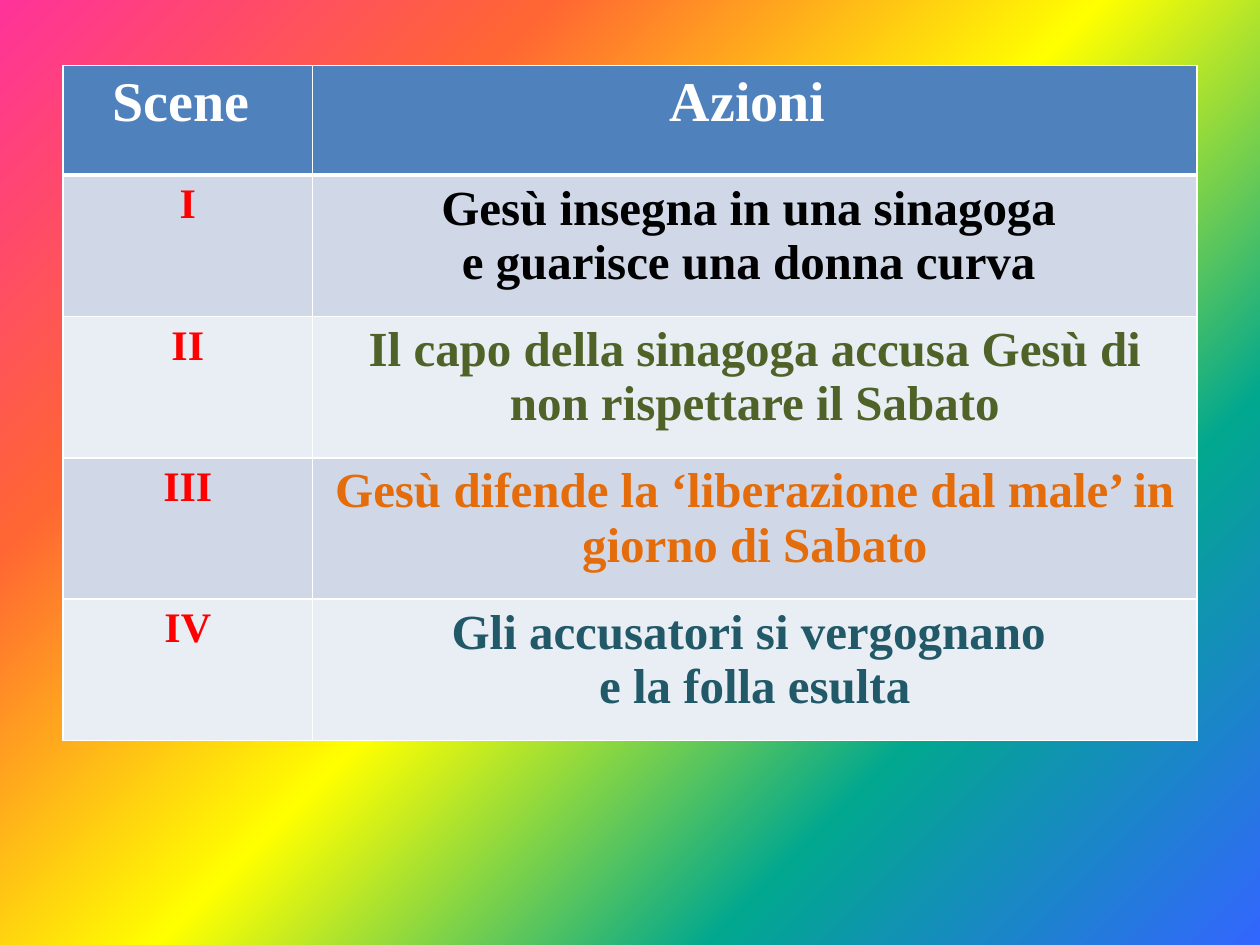
"""Build a slide with a table of scenes and actions on a rainbow background."""
import pptx
import pptx.dml.color
import pptx.enum.text
import pptx.oxml.ns
import pptx.util
from lxml import etree

Cm, Pt, qn = pptx.util.Cm, pptx.util.Pt, pptx.oxml.ns.qn

FONT = "Times New Roman"
WHITE, RED = "FFFFFF", "FF0000"
HEADER_FILL = "4F81BD"
BAND_FILLS = ["D0D8E8", "E9EDF4"]
RAINBOW = ["FF3399", "FF6633", "FFFF00", "01A78F", "3366FF"]
HEADER = ["Scene ", "Azioni "]
SCENES = [
    ("I", ["Gesù insegna in una sinagoga ", "e guarisce una donna curva "], "000000"),
    ("II", ["Il capo della sinagoga accusa Gesù di non rispettare il Sabato"], "4F6228"),
    ("III", ["Gesù difende la ‘liberazione dal male’ in giorno di Sabato"], "E46C0A"),
    ("IV", ["Gli accusatori si vergognano ", "e la folla esulta"], "215968"),
]
COL_WIDTHS = [5.03, 17.83]
HEADER_HEIGHT, SCENE_HEIGHT = 2.21, 2.85


def rgb(color):
    return pptx.dml.color.RGBColor.from_string(color)


def add_solid(parent, color):
    fill = etree.SubElement(parent, qn("a:solidFill"))
    etree.SubElement(fill, qn("a:srgbClr"), val=color)


def set_background(s):
    fill = s.background.fill
    fill.gradient()
    fill.gradient_angle = 315
    stops = next(s.element.iter(qn("a:gsLst")))
    for stop in list(stops):
        stops.remove(stop)
    for i, color in enumerate(RAINBOW):
        pos = 100000 * i // (len(RAINBOW) - 1)
        stop = etree.SubElement(stops, qn("a:gs"), pos=str(pos))
        etree.SubElement(stop, qn("a:srgbClr"), val=color)


def set_borders(cell, top, bottom):
    tcPr = cell._tc.get_or_add_tcPr()
    for side, width in zip("LRTB", [1, 1, top, bottom]):
        ln = etree.SubElement(tcPr, qn(f"a:ln{side}"), w=str(Pt(width)))
        add_solid(ln, WHITE)


def fill_cell(cell, lines, size, color, fill):
    cell.fill.solid()
    cell.fill.fore_color.rgb = rgb(fill)
    tf = cell.text_frame
    for i, line in enumerate(lines):
        p = tf.add_paragraph() if i else tf.paragraphs[0]
        p.alignment = pptx.enum.text.PP_ALIGN.CENTER
        r = p.add_run()
        r.text = line
        r.font.name, r.font.size, r.font.bold = FONT, Pt(size), True
        r.font.color.rgb = rgb(color)


def add_scene_table(s):
    heights = [HEADER_HEIGHT] + [SCENE_HEIGHT] * len(SCENES)
    table = s.shapes.add_table(
        len(heights), len(COL_WIDTHS), Cm(1.27), Cm(1.32),
        Cm(sum(COL_WIDTHS)), Cm(sum(heights))).table
    for col, width in zip(table.columns, COL_WIDTHS):
        col.width = Cm(width)
    for i, height in enumerate(heights):
        table.rows[i].height = Cm(height)
        for cell in table.rows[i].cells:
            set_borders(cell, 3 if i == 1 else 1, 3 if i == 0 else 1)
    for j, title in enumerate(HEADER):
        fill_cell(table.cell(0, j), [title], 32, WHITE, HEADER_FILL)
    for i, (scene, actions, color) in enumerate(SCENES):
        fill = BAND_FILLS[i % 2]
        fill_cell(table.cell(i + 1, 0), [scene], 24, RED, fill)
        fill_cell(table.cell(i + 1, 1), actions, 28, color, fill)


def main():
    prs = pptx.Presentation()
    prs.slide_width, prs.slide_height = Cm(25.4), Cm(19.05)
    s = prs.slides.add_slide(prs.slide_layouts[6])
    set_background(s)
    add_scene_table(s)
    prs.save("out.pptx")


if __name__ == "__main__":
    main()
